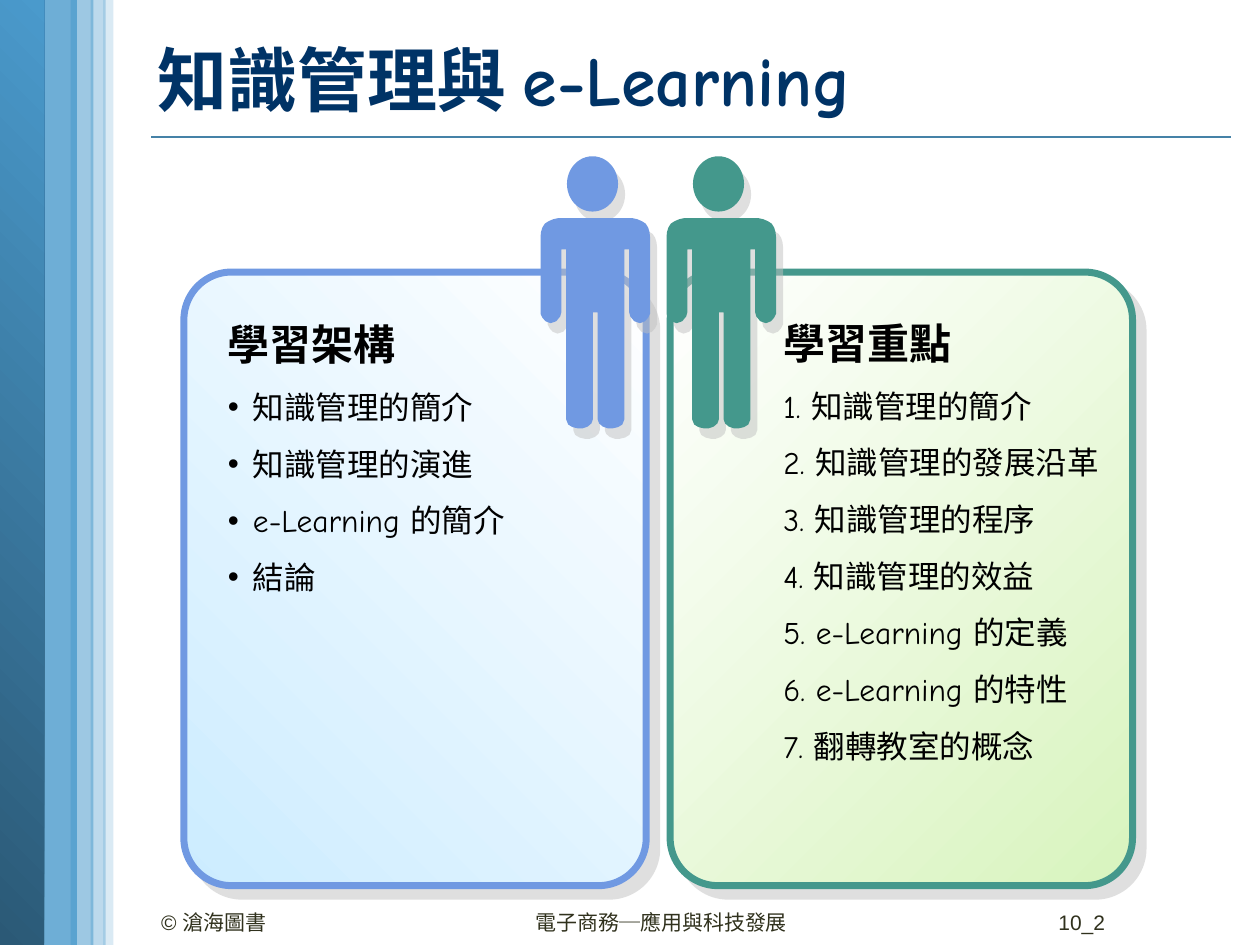
from lxml.etree import SubElement
from pptx import Presentation
from pptx.dml.color import RGBColor
from pptx.enum.shapes import MSO_CONNECTOR, MSO_SHAPE
from pptx.enum.text import MSO_ANCHOR, PP_ALIGN
from pptx.oxml.ns import qn
from pptx.util import Pt

COLORS = {
    "sky": "4A9ACC",
    "deep": "2B5976",
    "rule": "4582A7",
    "title": "003366",
    "footer": "30311D",
    "ink": "000000",
    "white": "FFFFFF",
    "shadow": "C0C0C0",
    "blue": "7099E2",
    "pale_blue": "CCECFF",
    "green": "44988C",
    "pale_green": "D8F4BE",
}

HALF_BODY = [
    (21, 0), (24, 0.7), (26.6, 1.8), (28.8, 3.2), (30.2, 5.4), (31, 8), (31.3, 10.8),
    (31.3, 54.7), (30.2, 57), (28.4, 59), (25.6, 60.1), (22.3, 59), (20, 56.2), (19.4, 54),
    (19.4, 18), (16.6, 18), (16.6, 115.2), (15.5, 118), (13, 119.5), (10, 120.2),
    (7.2, 120.2), (4.3, 119.2), (2.2, 117.4), (1.4, 115.2), (1.4, 54),
]


class SlideBuilder:
    title_font = "Comic Neue"
    footer_font = "Arial"

    def __init__(self, slide):
        self.slide = slide

    def color(self, name):
        return RGBColor.from_string(COLORS[name])

    def add_alpha(self, color_element, percent):
        SubElement(color_element, qn("a:alpha"), val=str(percent * 1000))

    def cast_shadow(self, shape, distance, angle):
        effects = shape._element.spPr.find(qn("a:effectLst"))
        shadow = SubElement(effects, qn("a:outerShdw"), dist=str(Pt(distance)),
                            dir=str(angle * 60000), algn="ctr", rotWithShape="0")
        tone = SubElement(shadow, qn("a:srgbClr"), val=COLORS["shadow"])
        self.add_alpha(tone, 50)

    def paint(self, shape, fill, alpha=100):
        shape.shadow.inherit = False
        shape.line.fill.background()
        shape.fill.solid()
        shape.fill.fore_color.rgb = self.color(fill)
        if alpha < 100:
            self.add_alpha(shape._element.spPr.find(".//" + qn("a:srgbClr")), alpha)

    def blend(self, shape, start, end, angle):
        shape.fill.gradient()
        shape.fill.gradient_angle = angle
        for stop, name, position in zip(shape.fill.gradient_stops, (start, end), (0, 1)):
            stop.color.rgb = self.color(name)
            stop.position = position

    def box(self, left, top, width, height, fill, kind=MSO_SHAPE.RECTANGLE, alpha=100):
        shape = self.slide.shapes.add_shape(kind, Pt(left), Pt(top), Pt(width), Pt(height))
        self.paint(shape, fill, alpha)
        return shape

    def rule(self, left, right, y):
        rule = self.slide.shapes.add_connector(
            MSO_CONNECTOR.STRAIGHT, Pt(left), Pt(y), Pt(right), Pt(y))
        rule.line.color.rgb = self.color("rule")
        rule.line.width = Pt(1)
        SubElement(rule._element.spPr, qn("a:effectLst"))

    def panel(self, left, edge, start, end, angle):
        panel = self.box(left, 155.5, 264.2, 350.6, "white", MSO_SHAPE.ROUNDED_RECTANGLE)
        panel.adjustments[0] = 0.103
        self.blend(panel, start, end, angle)
        panel.line.color.rgb = self.color(edge)
        panel.line.width = Pt(4)
        self.cast_shadow(panel, 8.5, 45)

    def person(self, center, fill):
        head = self.box(center - 16.2, 89.3, 29.2, 31.6, fill, MSO_SHAPE.OVAL)
        mirrored = [(-x, y) for x, y in reversed(HALF_BODY)]
        outline = [(Pt(center + x), Pt(124.6 + y)) for x, y in HALF_BODY + mirrored]
        builder = self.slide.shapes.build_freeform(*outline[0])
        builder.add_line_segments(outline[1:], close=True)
        body = builder.convert_to_shape()
        self.paint(body, fill)
        for part in (head, body):
            self.cast_shadow(part, 7.2, 56)

    def frame(self, left, top, width, height, anchor=MSO_ANCHOR.TOP):
        frame = self.slide.shapes.add_textbox(
            Pt(left), Pt(top), Pt(width), Pt(height)).text_frame
        frame.word_wrap = True
        frame.vertical_anchor = anchor
        return frame

    def set_text(self, paragraph, text, *, size, color="ink", font=title_font, bold=False,
                 align=PP_ALIGN.LEFT, spacing=1.0, indent=0, bullet=None):
        properties = paragraph._p.get_or_add_pPr()
        if indent:
            properties.set("marL", str(Pt(indent)))
            properties.set("indent", str(-Pt(indent)))
        if bullet:
            SubElement(properties, qn("a:buFont"), typeface=self.footer_font)
            SubElement(properties, qn("a:buChar"), char=bullet)
        paragraph.alignment = align
        paragraph.line_spacing = spacing
        run = paragraph.add_run()
        run.text = text
        run.font.size = Pt(size)
        run.font.name = font
        run.font.bold = bold
        run.font.color.rgb = self.color(color)

    def title(self, text):
        frame = self.frame(82.8, 5, 626.4, 80, MSO_ANCHOR.MIDDLE)
        self.set_text(frame.paragraphs[0], text, size=40, color="title", bold=True)

    def topics(self, left, top, width, height, heading, items, **item_format):
        frame = self.frame(left, top, width, height)
        self.set_text(frame.paragraphs[0], heading, size=24, bold=True, spacing=1.5)
        for item in items:
            self.set_text(frame.add_paragraph(), item, size=18, spacing=1.5, **item_format)

    def footer(self, left, width, text, align=PP_ALIGN.LEFT):
        frame = self.frame(left, 516.2, width, 18.7)
        self.set_text(frame.paragraphs[0], text, size=12, color="footer",
                      font=self.footer_font, align=align)


def main():
    deck = Presentation()
    deck.slide_width, deck.slide_height = Pt(720), Pt(540)
    page = SlideBuilder(deck.slides.add_slide(deck.slide_layouts[6]))

    page.rule(86.4, 703.4, 78.5)
    page.box(21.6, 0, 22.3, 540, "sky", alpha=80)
    edge_band = page.box(0, 0, 25.2, 540, "sky")
    page.blend(edge_band, "deep", "sky", 45)
    for left, width, alpha in ((59, 5.8, 20), (40.3, 13, 54), (51.8, 8.6, 37)):
        page.box(left, 0, width, 540, "sky", alpha=alpha)

    page.title("知識管理與 e-Learning")
    page.footer(85, 167.8, "© 滄海圖書")

    page.panel(105.1, "blue", "pale_blue", "white", 45)
    page.person(340.2, "blue")
    page.topics(123.1, 164.2, 223.2, 181.4, "學習架構",
                ["知識管理的簡介", "知識管理的演進", "e-Learning 的簡介", "結論"],
                indent=14.4, bullet="•")

    page.panel(383, "green", "white", "pale_green", 315)
    lessons = ["知識管理的簡介", "知識管理的發展沿革", "知識管理的程序", "知識管理的效益",
               "e-Learning 的定義", "e-Learning 的特性", "翻轉教室的概念"]
    page.topics(440.6, 163.4, 203.8, 283.7, "學習重點",
                [f"{number}. {lesson}" for number, lesson in enumerate(lessons, 1)],
                indent=27.4)
    page.person(412.2, "green")

    page.footer(298.8, 169.9, "電子商務─應用與科技發展")
    page.footer(586.8, 51.8, "10_2", PP_ALIGN.RIGHT)
    deck.save("out.pptx")


if __name__ == "__main__":
    main()
